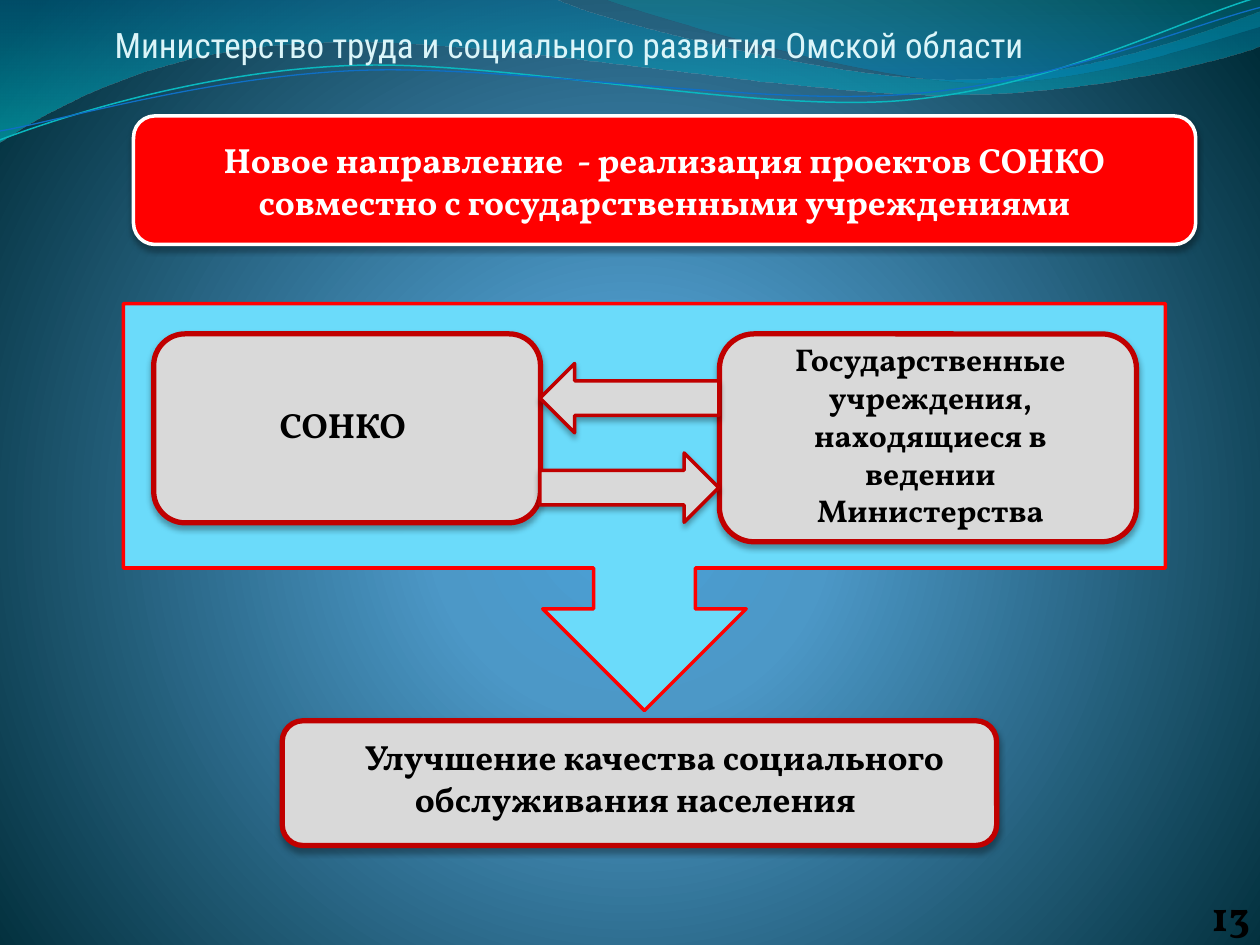
from math import cos, radians, sin

from lxml.etree import SubElement
from pptx import Presentation
from pptx.dml.color import RGBColor as RGB
from pptx.enum.shapes import MSO_SHAPE as Kind
from pptx.enum.text import MSO_ANCHOR as Anchor, MSO_AUTO_SIZE as Fit, PP_ALIGN as Align
from pptx.oxml import parse_xml
from pptx.oxml.ns import nsdecls, qn
from pptx.util import Inches, Pt

RED = RGB(0xFF, 0, 0)
DARK = RGB(0xC0, 0, 0)
WHITE = RGB(0xFF, 0xFF, 0xFF)
BLACK = RGB(0, 0, 0)
GRAY = RGB(0xD9, 0xD9, 0xD9)
CYAN = RGB(0x6B, 0xDB, 0xFA)
PALE = RGB(0xDB, 0xF5, 0xF9)
TEAL = RGB(0x0A, 0xB8, 0xBF)
BLUE = RGB(0x0F, 0x6F, 0xC6)
SKY = RGB(0x4A, 0xA0, 0xD6)
MID = RGB(0x4C, 0x98, 0xC7)
NIGHT = RGB(0, 0x2C, 0x38)
SEA = RGB(0, 0x74, 0xA1)
AQUA = RGB(0, 0xC6, 0xCF)
JADE = RGB(0, 0xA1, 0xA9)
AZURE = RGB(0, 0x8B, 0xBF)
SERIF = "Vollkorn"
SANS = "Roboto Condensed"
TILT = 2.7
LINEAR = '<a:lin ang="5400000" scaled="1"/>'
ROUND = ('<a:path path="circle"><a:fillToRect l="10000" t="110000" '
         'r="10000" b="100000"/></a:path>')


def blend(root, stops, shade):
    marks = "".join(
        f'<a:gs pos="{pos * 1000}"><a:srgbClr val="{tint}">'
        f'<a:alpha val="{alpha * 1000}"/></a:srgbClr></a:gs>'
        for pos, tint, alpha in stops)
    old = root.xpath(".//p:bgPr/a:solidFill | ./p:spPr/a:solidFill")[0]
    old.getparent().replace(old, parse_xml(
        f'<a:gradFill {nsdecls("a")} rotWithShape="1">'
        f'<a:gsLst>{marks}</a:gsLst>{shade}</a:gradFill>'))


def trace(slide, start, parts, close):
    spots = [(Inches(x), Inches(y)) for part in parts for x, y in part]
    draft = slide.shapes.build_freeform(*map(Inches, start))
    draft.add_line_segments(spots, close=close)
    shape = draft.convert_to_shape()
    shape.shadow.inherit = False
    route = shape.element.xpath(".//a:path")[0]
    lines = iter(route.findall(qn("a:lnTo")))
    for part in parts:
        group = [next(lines) for _ in part]
        if len(group) == 3:
            curve = SubElement(route, qn("a:cubicBezTo"))
            group[0].addprevious(curve)
            for line in group:
                curve.append(line[0])
                route.remove(line)
    return shape


def add_wave(slide, start, parts, stops):
    wave = trace(slide, start, parts, True)
    wave.fill.solid()
    blend(wave.element, stops, LINEAR)
    wave.line.fill.background()


def add_curve(slide, start, parts, mid, tint, width):
    turn = radians(TILT)

    def spin(spot):
        x, y = spot[0] - mid[0], spot[1] - mid[1]
        return (mid[0] + x * cos(turn) - y * sin(turn),
                mid[1] + x * sin(turn) + y * cos(turn))

    curve = trace(slide, spin(start), [[spin(p) for p in part] for part in parts], False)
    curve.rotation = 360 - TILT
    curve.fill.background()
    curve.line.color.rgb = tint
    curve.line.width = Pt(width)


def add_box(slide, kind, rect, fill, edge, width, shade=True):
    box = slide.shapes.add_shape(kind, *map(Inches, rect))
    box.shadow.inherit = False
    box.fill.solid()
    box.fill.fore_color.rgb = fill
    box.line.color.rgb = edge
    box.line.width = Pt(width)
    if shade:
        glow = box.element.spPr.find(qn("a:effectLst"))
        glow.append(parse_xml(
            f'<a:outerShdw {nsdecls("a")} blurRad="{Pt(3.5)}" dist="{Pt(2.2)}" '
            'dir="5400000" rotWithShape="0"><a:srgbClr val="000000">'
            '<a:alpha val="32000"/></a:srgbClr></a:outerShdw>'))
    return box


def set_text(shape, text, size, tint, font=SERIF, bold=True, align=Align.CENTER,
             anchor=Anchor.MIDDLE, pads=(0.1, 0.05, 0.1, 0.05)):
    frame = shape.text_frame
    frame.word_wrap = True
    frame.vertical_anchor = anchor
    (frame.margin_left, frame.margin_top,
     frame.margin_right, frame.margin_bottom) = map(Inches, pads)
    frame.text = text
    para = frame.paragraphs[0]
    para.alignment = align
    para.font.size = Pt(size)
    para.font.name = font
    para.font.bold = bold
    para.font.color.rgb = tint
    return para


def add_label(slide, rect, text, size, align, indent):
    label = slide.shapes.add_textbox(*map(Inches, rect))
    para = set_text(label, text, size, BLACK, align=align, anchor=Anchor.TOP)
    label.text_frame.auto_size = Fit.SHAPE_TO_FIT_TEXT
    if indent:
        para._p.get_or_add_pPr().set("indent", str(Inches(indent)))


def add_waves(slide):
    add_wave(slide, (0, 0), [
        [(4.4, -0.01)],
        [(4.76, 0.17), (6.64, 0.63), (7.58, 0.63)],
        [(8.53, 0.63), (9.58, 0.26), (10, 0.09)],
        [(10.01, 0.36)],
        [(9.83, 0.44), (8.7, 0.76), (7.46, 0.75)],
        [(6.22, 0.75), (3.82, 0.28), (2.57, 0.34)],
        [(1.29, 0.36), (0.46, 0.83), (-0.01, 1.13)],
        [(0, 0)]], [(0, SEA, 45), (100, AQUA, 55)])
    add_wave(slide, (4.79, -0.01), [
        [(5.09, 0.11), (6.82, 0.62), (7.69, 0.65)],
        [(8.56, 0.69), (9.61, 0.32), (10, 0.21)],
        [(10, 0)], [(4.79, -0.01)]], [(0, JADE, 30), (80, AZURE, 45)])
    add_curve(slide, (0, 1.11), [
        [(0.48, 0.93), (1.58, 0.57), (2.77, 0.52)],
        [(3.95, 0.47), (5.93, 0.89), (7.13, 0.8)],
        [(8.33, 0.71), (9.38, 0.15), (9.98, -0.02)]], (4.99, 0.58), TEAL, 0.85)
    add_curve(slide, (0, 1.04), [
        [(0.47, 0.96), (1.64, 0.61), (2.83, 0.56)],
        [(4.03, 0.51), (5.97, 0.84), (7.17, 0.75)],
        [(8.36, 0.67), (9.41, 0.21), (10, 0.06)]], (5, 0.59), BLUE, 0.75)


def add_title(slide, text):
    title = slide.shapes.title
    title.left, title.top, title.width, title.height = map(
        Inches, (0.91, 0.05, 8.43, 0.47))
    set_text(title, text, 20, PALE, SANS, False, Align.LEFT, Anchor.BOTTOM,
             (0, 0.05, 0, 0))
    title.element.getparent().append(title.element)


def add_page(slide, text):
    page = slide.shapes.add_textbox(*map(Inches, (9.09, 7.06, 0.83, 0.4)))
    set_text(page, text, 24, BLACK, align=Align.RIGHT, anchor=Anchor.BOTTOM,
             pads=(0, 0, 0, 0))


def add_card(slide, rect, *label):
    add_box(slide, Kind.ROUNDED_RECTANGLE, rect, GRAY, DARK, 3)
    add_label(slide, *label)


def main():
    deck = Presentation()
    deck.slide_width, deck.slide_height = Inches(10), Inches(7.5)
    slide = deck.slides.add_slide(deck.slide_layouts[5])
    slide.background.fill.solid()
    blend(slide.element, [(0, SKY, 100), (25, MID, 100), (100, NIGHT, 100)], ROUND)
    add_waves(slide)
    add_box(slide, Kind.DOWN_ARROW_CALLOUT, (0.98, 2.41, 8.27, 3.23),
            CYAN, RED, 2, False)
    head = add_box(slide, Kind.FLOWCHART_ALTERNATE_PROCESS, (1.06, 0.92, 8.43, 1.02),
                   RED, WHITE, 2)
    set_text(head, "Новое направление  - реализация проектов СОНКО "
             "совместно с государственными учреждениями", 20, WHITE)
    add_page(slide, "13")
    add_title(slide, "Министерство труда и социального развития Омской области")
    add_card(slide, (1.22, 2.65, 3.07, 1.5), (1.83, 3.15, 2.01, 0.38),
             "СОНКО", 20, Align.JUSTIFY, 0.29)
    add_card(slide, (5.71, 2.65, 3.31, 1.65), (5.87, 2.65, 3.03, 1.25),
             "Государственные учреждения, находящиеся в ведении Министерства",
             18, Align.CENTER, 0)
    for top, turn in ((2.45, 90), (3.16, 270)):
        arrow = add_box(slide, Kind.DOWN_ARROW, (4.72, top, 0.55, 1.42), GRAY, DARK, 2)
        arrow.rotation = turn
    add_card(slide, (2.24, 5.72, 5.67, 0.99), (2.41, 5.79, 5.27, 1.11),
             "Улучшение качества социального обслуживания населения",
             20, Align.CENTER, 0.3)
    deck.save("out.pptx")


if __name__ == "__main__":
    main()
